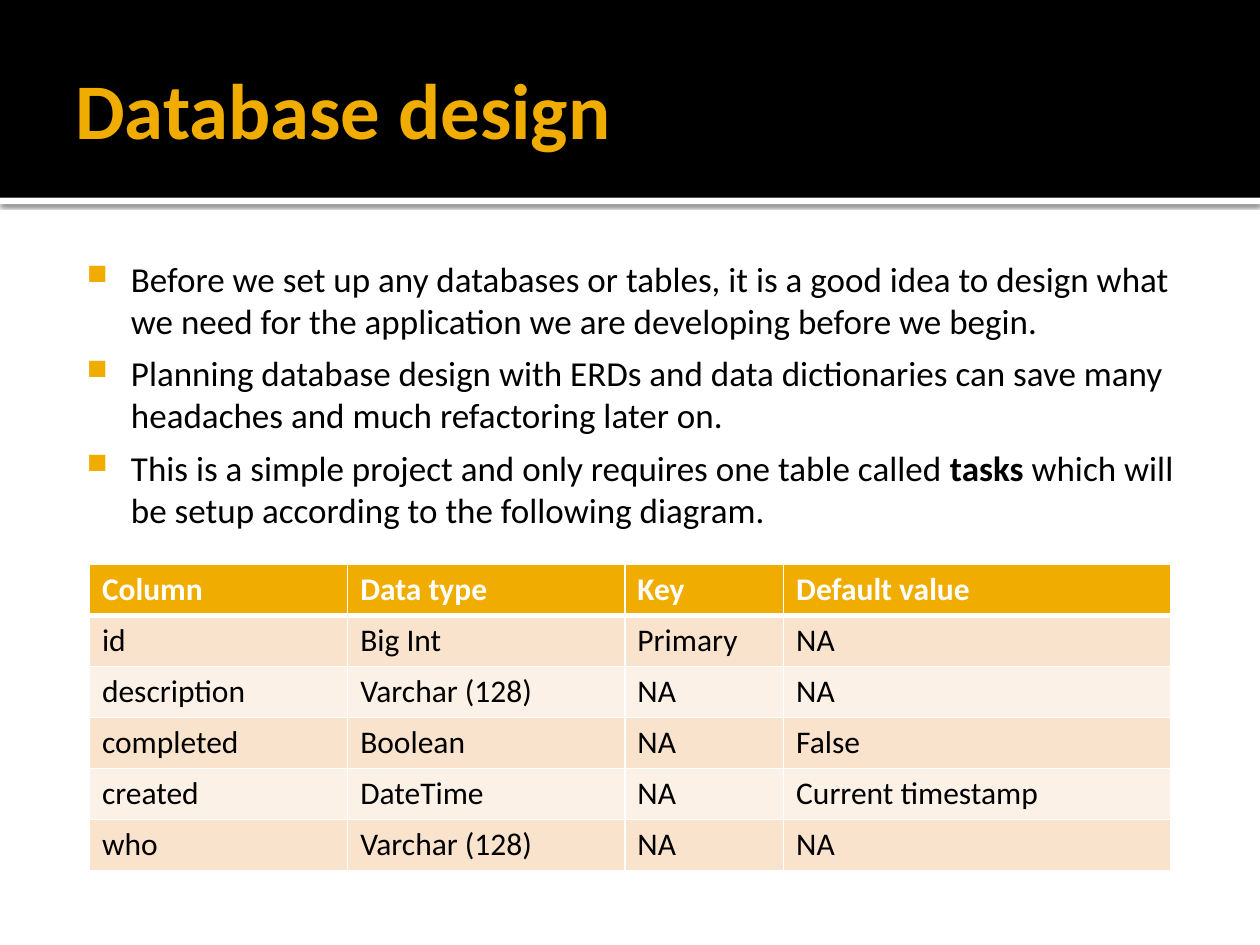
from typing import NamedTuple

import pptx
import pptx.dml.color
import pptx.enum.shapes
import pptx.enum.text
import pptx.oxml
import pptx.oxml.ns
import pptx.util

Inches = pptx.util.Inches
Pt = pptx.util.Pt
FONT = "Calibri"
COLORS = {"gold": "F0AD00", "black": "000000", "white": "FFFFFF",
          "band_dark": "F9E3CC", "band_light": "FCF1E7"}
NS = pptx.oxml.ns.nsdecls("a")


class Box(NamedTuple):
    left: float
    top: float
    width: float
    height: float

    def lengths(self) -> list:
        return [Inches(v) for v in self]


class Run(NamedTuple):
    text: str
    bold: bool = False


BULLETS = [
    [Run("Before we set up any databases or tables, it is a good idea to design what "
         "we need for the application we are developing before we begin.")],
    [Run("Planning database design with ERDs and data dictionaries can save many "
         "headaches and much refactoring later on.")],
    [Run("This is a simple project and only requires one table called "),
     Run("tasks ", True),
     Run("which will be setup according to the following diagram.")],
]
COLUMN_WIDTHS = [2.05, 2.2, 1.26, 3.07]
ROW_HEIGHT = 0.405
ROWS = [
    ["Column", "Data type", "Key", "Default value"],
    ["id", "Big Int", "Primary", "NA"],
    ["description", "Varchar (128)", "NA", "NA"],
    ["completed", "Boolean", "NA", "False"],
    ["created", "DateTime", "NA", "Current timestamp"],
    ["who", "Varchar (128)", "NA", "NA"],
]


def rgb(name: str) -> pptx.dml.color.RGBColor:
    return pptx.dml.color.RGBColor.from_string(COLORS[name])


def add_run(p, run: Run, size: float, color: str) -> None:
    r = p.add_run()
    r.text = run.text
    for name, value in {"name": FONT, "size": Pt(size), "bold": run.bold}.items():
        setattr(r.font, name, value)
    r.font.color.rgb = rgb(color)


def add_band(slide, box: Box, color: str):
    sp = slide.shapes.add_shape(pptx.enum.shapes.MSO_SHAPE.RECTANGLE, *box.lengths())
    sp.shadow.inherit = False
    sp.fill.solid()
    sp.fill.fore_color.rgb = rgb(color)
    sp.line.fill.background()
    return sp


def add_drop_shadow(sp) -> None:
    effects = sp._element.spPr.find(pptx.oxml.ns.qn("a:effectLst"))
    effects.append(pptx.oxml.parse_xml(
        f'<a:outerShdw {NS} blurRad="{Pt(2.5)}" dist="{Pt(0.8)}" dir="5400000" rotWithShape="0">'
        f'<a:srgbClr val="{COLORS["black"]}"><a:alpha val="60000"/></a:srgbClr></a:outerShdw>'))


def add_text_frame(slide, box: Box, insets: Box, anchor):
    """Add a wrapping text box; insets are left, top, right and bottom."""
    tf = slide.shapes.add_textbox(*box.lengths()).text_frame
    left, top, right, bottom = insets.lengths()
    settings = {"word_wrap": True, "vertical_anchor": anchor, "margin_left": left,
                "margin_top": top, "margin_right": right, "margin_bottom": bottom}
    for name, value in settings.items():
        setattr(tf, name, value)
    return tf


def add_bullet(p, runs: list[Run]) -> None:
    p.space_after = Pt(6)
    pPr = p._p.get_or_add_pPr()
    pPr.set("marL", str(Inches(0.48)))
    pPr.set("indent", str(Inches(-0.35)))
    for xml in (f'<a:buClr {NS}><a:srgbClr val="{COLORS["gold"]}"/></a:buClr>',
                f'<a:buSzPct {NS} val="80000"/>',
                f'<a:buChar {NS} char="■"/>'):
        pPr.append(pptx.oxml.parse_xml(xml))
    for run in runs:
        add_run(p, run, 20, "black")


def set_borders(cell, bottom: float, top: float) -> None:
    tcPr = cell._tc.get_or_add_tcPr()
    widths = {"lnL": 1, "lnR": 1, "lnT": top, "lnB": bottom}
    for i, (tag, width) in enumerate(widths.items()):
        tcPr.insert(i, pptx.oxml.parse_xml(
            f'<a:{tag} {NS} w="{Pt(width)}"><a:solidFill>'
            f'<a:srgbClr val="{COLORS["white"]}"/></a:solidFill></a:{tag}>'))


def add_columns_table(slide, left: float, top: float) -> None:
    box = Box(left, top, sum(COLUMN_WIDTHS), ROW_HEIGHT * len(ROWS))
    table = slide.shapes.add_table(len(ROWS), len(COLUMN_WIDTHS), *box.lengths()).table
    for column, width in zip(table.columns, COLUMN_WIDTHS):
        column.width = Inches(width)
    for i, texts in enumerate(ROWS):
        header = i == 0
        fill = "gold" if header else "band_dark" if i % 2 else "band_light"
        for j, text in enumerate(texts):
            cell = table.cell(i, j)
            cell.fill.solid()
            cell.fill.fore_color.rgb = rgb(fill)
            set_borders(cell, bottom=3 if header else 1, top=3 if i == 1 else 1)
            add_run(cell.text_frame.paragraphs[0], Run(text, header), 18,
                    "white" if header else "black")


def main() -> None:
    prs = pptx.Presentation()
    prs.slide_width, prs.slide_height = Inches(10), Inches(7.5)
    slide = prs.slides.add_slide(prs.slide_layouts[6])

    add_drop_shadow(add_band(slide, Box(0, 1.57, 10, 0.05), "white"))
    add_band(slide, Box(0, 0, 10, 1.57), "black")

    title = add_text_frame(slide, Box(0.5, 0.17, 9, 1.37), Box(0.1, 0.05, 0.05, 0.05),
                           pptx.enum.text.MSO_ANCHOR.MIDDLE)
    add_run(title.paragraphs[0], Run("Database design", True), 45, "gold")

    body = add_text_frame(slide, Box(0.5, 1.94, 9, 5.06), Box(0.06, 0.1, 0.1, 0.05),
                          pptx.enum.text.MSO_ANCHOR.TOP)
    for i, runs in enumerate(BULLETS):
        add_bullet(body.add_paragraph() if i else body.paragraphs[0], runs)

    add_columns_table(slide, 0.71, 4.48)
    prs.save("out.pptx")


if __name__ == "__main__":
    main()
